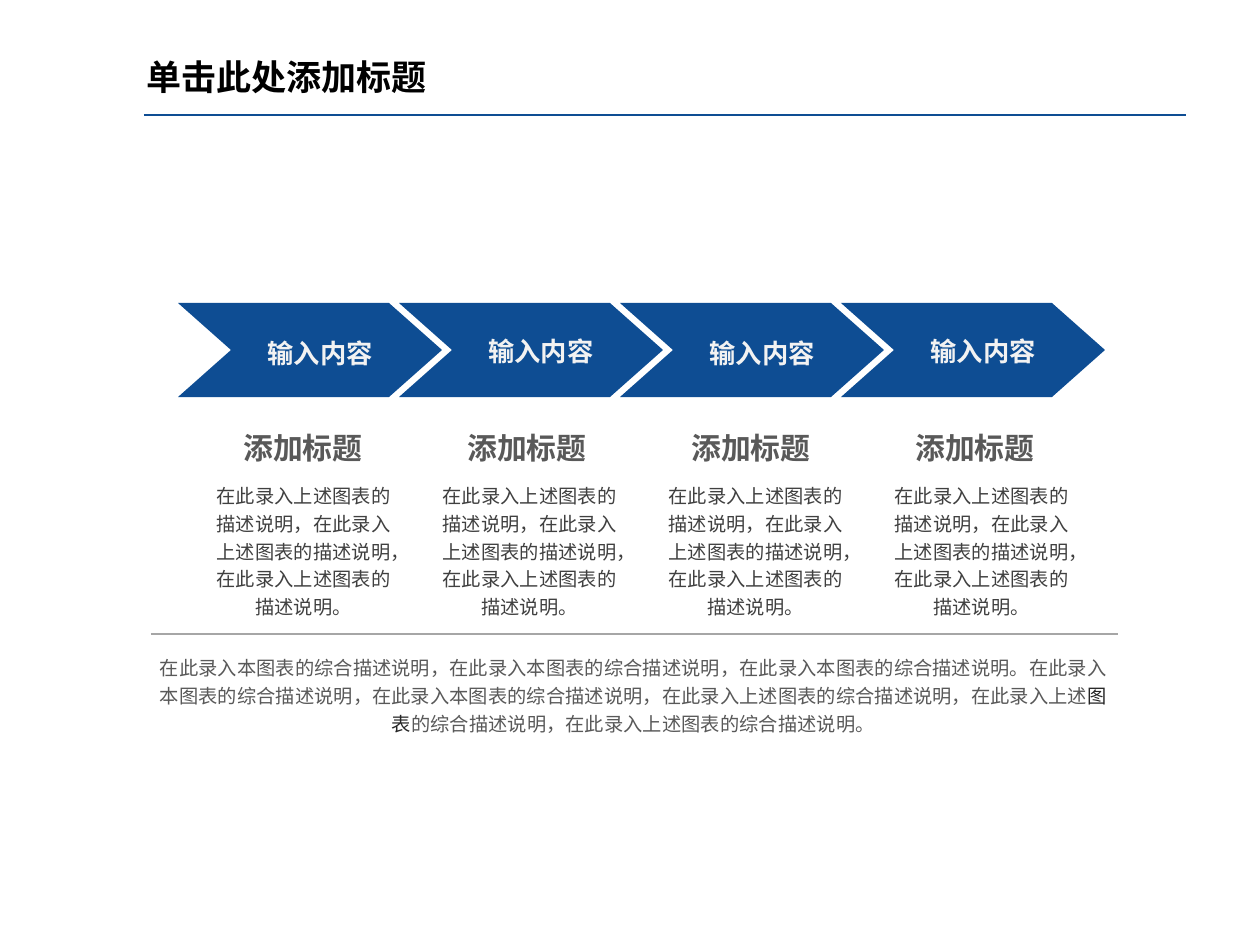
from lxml import etree
from pptx import Presentation
from pptx.dml.color import RGBColor
from pptx.enum.shapes import MSO_CONNECTOR
from pptx.enum.text import MSO_ANCHOR, PP_ALIGN
from pptx.oxml.ns import qn
from pptx.util import Pt

PX = 6858  # EMU per px
CENTER, LEFT = PP_ALIGN.CENTER, PP_ALIGN.LEFT
TOP, MIDDLE = MSO_ANCHOR.TOP, MSO_ANCHOR.MIDDLE
STRAIGHT = MSO_CONNECTOR.STRAIGHT
CJK = "Noto Sans CJK SC"
COLORS = {
    "blue": "0E4D93", "title": "000000", "label": "F2F2F2", "grey": "595959",
    "body": "404040", "dark": "262626", "rule": "A6A6A6",
}

prs = Presentation()
prs.slide_width, prs.slide_height = 1260 * PX, 945 * PX
slide = prs.slides.add_slide(prs.slide_layouts[6])


def add_text(box, runs, size, font=CJK, bold=False, align=CENTER, anchor=TOP,
             spacing=None, inset=(9, 5), wrap=True):
    """Add a one-paragraph text box; runs are (text, color name) pairs."""
    frame = slide.shapes.add_textbox(*(n * PX for n in box)).text_frame
    frame.word_wrap = wrap
    frame.vertical_anchor = anchor
    frame.margin_left = frame.margin_right = inset[0] * PX
    frame.margin_top = frame.margin_bottom = inset[1] * PX
    paragraph = frame.paragraphs[0]
    paragraph.alignment = align
    if spacing:
        paragraph.line_spacing = spacing
    for text, color in runs:
        run = paragraph.add_run()
        run.text = text
        run.font.size, run.font.bold, run.font.name = Pt(size), bold, font
        run.font.color.rgb = RGBColor.from_string(COLORS[color])
        east_asian = etree.SubElement(run._r.get_or_add_rPr(), qn("a:ea"))
        east_asian.set("typeface", CJK)


def add_rule(left, right, y, color):
    rule = slide.shapes.add_connector(STRAIGHT, left * PX, y * PX, right * PX, y * PX)
    rule.line.width = Pt(0.75)
    rule.line.color.rgb = RGBColor.from_string(COLORS[color])
    etree.SubElement(rule._element.spPr, qn("a:effectLst"))


# Title
add_rule(144, 1186, 115, "blue")
add_text((133, 49, 1052, 56), [("单击此处添加标题", "title")], 18.9, bold=True,
         align=LEFT, inset=(13, 7))

# Four steps: chevron, label, heading and description
for step in range(4):
    left, top = 178 + 221 * step, 303
    outline = slide.shapes.build_freeform(left, top, scale=PX)
    outline.add_line_segments([
        (left + 211, top), (left + 264, top + 47), (left + 211, top + 94),
        (left, top + 94), (left + 53, top + 47),
    ])
    chevron = outline.convert_to_shape()
    chevron.shadow.inherit = False
    chevron.fill.solid()
    chevron.fill.fore_color.rgb = RGBColor.from_string(COLORS["blue"])
    chevron.line.fill.background()

    # Labels alternate between looser and single line spacing
    label_top, label_height, label_spacing = ((324, 52, 1.2), (328, 45, None))[step % 2]
    add_text((left + 30, label_top, 224, label_height), [("输入内容", "label")], 14.2,
             font="Arial", bold=True, anchor=MIDDLE, spacing=label_spacing, inset=(13, 7))

    add_text((233 + 224 * step, 425, 140, 45), [("添加标题", "grey")], 16.1,
             bold=True, wrap=False)
    add_text((205 + 226 * step, 475, 197, 149),
             [("在此录入上述图表的描述说明，在此录入上述图表的描述说明，"
               "在此录入上述图表的描述说明。", "body")], 10.4, spacing=1.2)

# Summary
add_rule(151, 1118, 634, "rule")
add_text((149, 647, 969, 93), [
    ("在此录入本图表的综合描述说明，在此录入本图表的综合描述说明，"
     "在此录入本图表的综合描述说明。在此录入本图表的综合描述说明，"
     "在此录入本图表的综合描述说明，在此录入上述图表的综合描述说明，在此录入上述", "grey"),
    ("图表", "dark"),
    ("的综合描述说明，在此录入上述图表的综合描述说明。", "grey"),
], 10.4, spacing=1.2)

prs.save("out.pptx")
